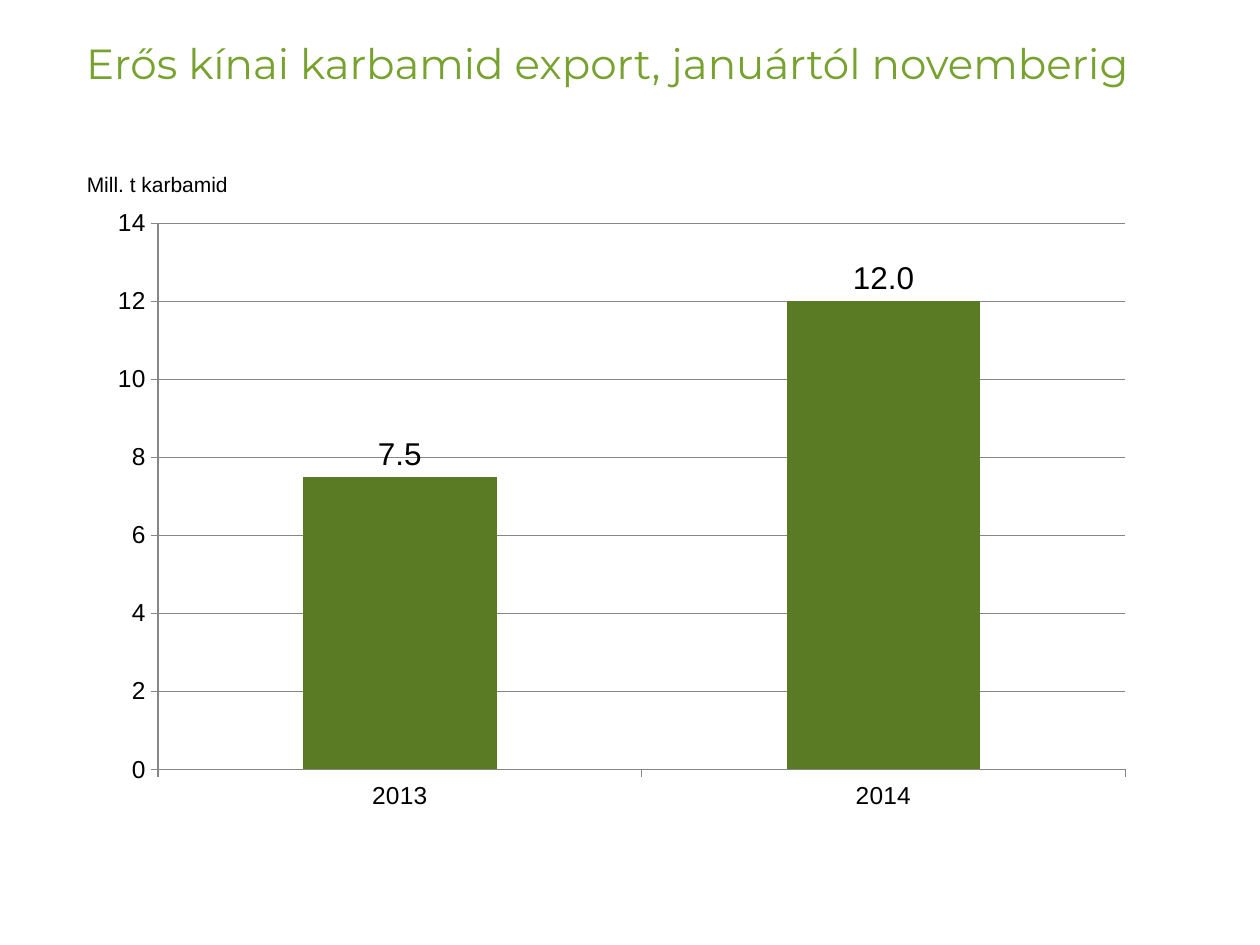
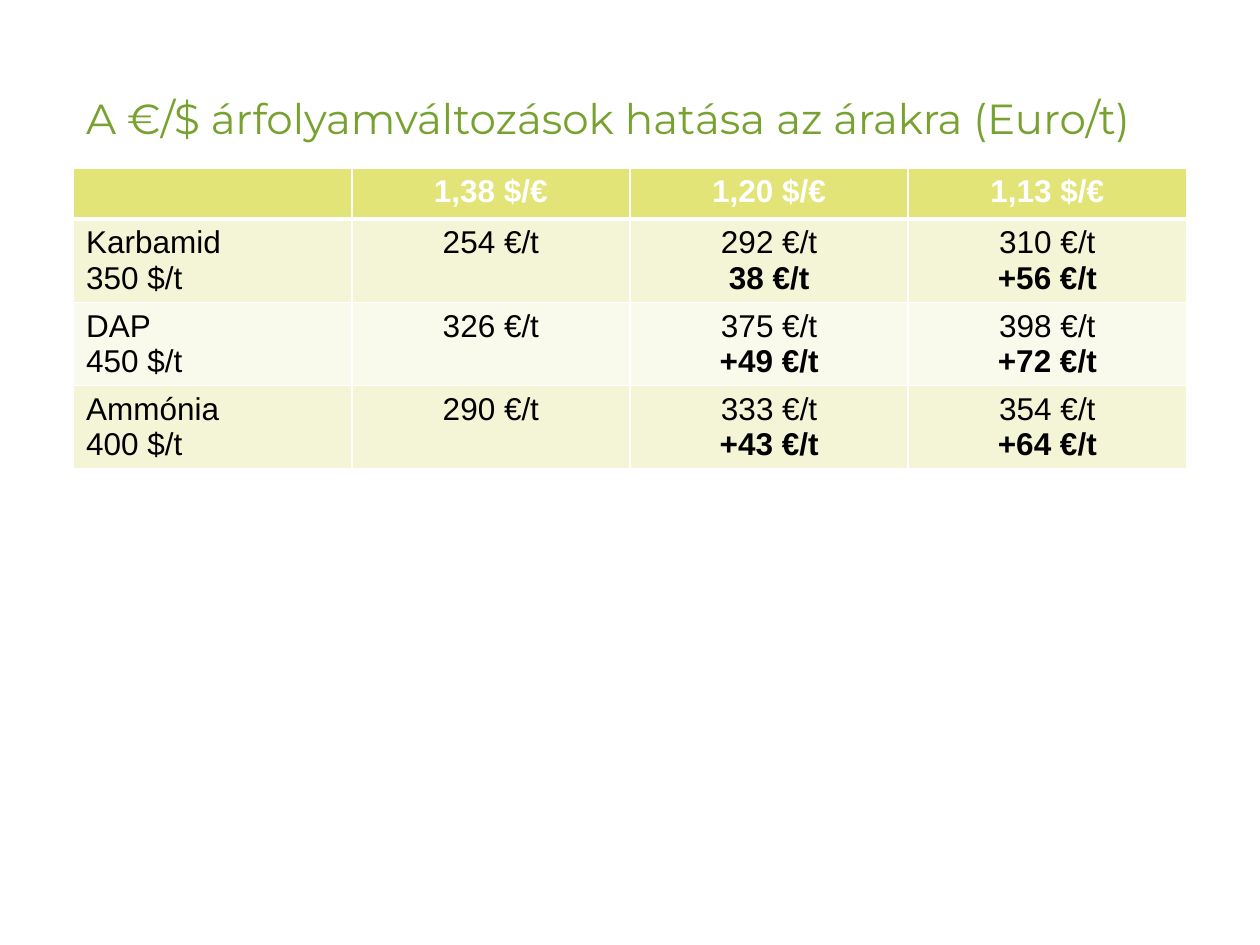
import pptx
import pptx.chart.data
import pptx.dml.color
import pptx.enum.chart
import pptx.enum.text
import pptx.oxml
import pptx.oxml.ns
import pptx.util
from lxml import etree

Pt = pptx.util.Pt
Align = pptx.enum.text.PP_ALIGN
Anchor = pptx.enum.text.MSO_ANCHOR
AutoSize = pptx.enum.text.MSO_AUTO_SIZE
qn = pptx.oxml.ns.qn

COLOURS = {
    "title": "78A22F",
    "text": "000000",
    "white": "FFFFFF",
    "bar": "5A7A23",
    "axis": "868686",
    "header": "E2E477",
    "band_dark": "F4F5D6",
    "band_light": "FAFAEC",
}
LEFT, WIDTH = 42, 636
BODY_TOP = 96


def rgb(name):
    return pptx.dml.color.RGBColor.from_string(COLOURS[name])


class Deck:
    body_font = "Arial"
    title_font = "Montserrat"

    def __init__(self):
        self.presentation = pptx.Presentation()
        self.presentation.slide_width = Pt(720)
        self.presentation.slide_height = Pt(540)
        self.slide = None

    def style(self, font, size, colour="text", bold=False, name=body_font):
        font.name = name
        font.size = Pt(size)
        font.bold = bold
        font.color.rgb = rgb(colour)

    def add_slide(self, heading, anchor):
        self.slide = self.presentation.slides.add_slide(self.presentation.slide_layouts[5])
        title = self.slide.shapes.title
        title.left, title.top, title.width, title.height = Pt(LEFT), Pt(18), Pt(WIDTH), Pt(67)
        frame = title.text_frame
        frame.text = heading
        frame.auto_size = AutoSize.NONE
        frame.vertical_anchor = anchor
        frame.paragraphs[0].alignment = Align.LEFT
        self.style(frame.paragraphs[0].font, 24, "title", name=self.title_font)

    def add_label(self, text, left, top, width, height):
        frame = self.slide.shapes.add_textbox(Pt(left), Pt(top), Pt(width), Pt(height)).text_frame
        frame.word_wrap = False
        frame.auto_size = AutoSize.SHAPE_TO_FIT_TEXT
        frame.text = text
        self.style(frame.paragraphs[0].font, 12)

    def add_columns(self, categories, values, height, top_value, step, plot_area):
        data = pptx.chart.data.CategoryChartData(number_format="#,##0.0")
        data.categories = categories
        data.add_series("Series 1", values)
        chart = self.slide.shapes.add_chart(
            pptx.enum.chart.XL_CHART_TYPE.COLUMN_CLUSTERED,
            Pt(LEFT), Pt(BODY_TOP), Pt(WIDTH), Pt(height), data).chart
        chart.has_title = False
        chart.has_legend = False
        self.style(chart.font, 18)

        for axis in (chart.category_axis, chart.value_axis):
            axis.major_tick_mark = pptx.enum.chart.XL_TICK_MARK.OUTSIDE
            axis.format.line.color.rgb = rgb("axis")
            axis.format.line.width = Pt(0.75)
            self.style(axis.tick_labels.font, 14)
        scale = chart.value_axis
        scale.minimum_scale, scale.maximum_scale, scale.major_unit = 0, top_value, step
        scale.tick_labels.number_format = "0"
        scale.tick_labels.number_format_is_linked = False
        scale.has_major_gridlines = True
        scale.major_gridlines.format.line.color.rgb = rgb("axis")
        scale.major_gridlines.format.line.width = Pt(0.75)

        plot = chart.plots[0]
        plot.gap_width = 150
        plot.vary_by_categories = False
        bars = plot.series[0].format.fill
        bars.solid()
        bars.fore_color.rgb = rgb("bar")
        plot.has_data_labels = True
        labels = plot.data_labels
        labels.show_value = True
        labels.number_format = "#,##0.0"
        labels.number_format_is_linked = False
        labels.position = pptx.enum.chart.XL_LABEL_POSITION.OUTSIDE_END
        self.style(labels.font, 18)
        self.place_plot(chart, plot_area)

    def place_plot(self, chart, plot_area):
        area = chart.element.find(".//" + qn("c:plotArea"))
        for old in area.findall(qn("c:layout")):
            area.remove(old)
        layout = etree.Element(qn("c:layout"))
        manual = etree.SubElement(layout, qn("c:manualLayout"))
        settings = [("layoutTarget", "inner"), ("xMode", "edge"), ("yMode", "edge")]
        for tag, value in settings + list(zip("xywh", plot_area)):
            etree.SubElement(manual, qn("c:" + tag)).set("val", str(value))
        area.insert(0, layout)

    def add_cell_borders(self, cell, bottom):
        properties = cell._tc.get_or_add_tcPr()
        for side, width in (("L", 1), ("R", 1), ("T", 1), ("B", bottom)):
            line = etree.SubElement(properties, qn("a:ln" + side), w=str(Pt(width)))
            fill = etree.SubElement(line, qn("a:solidFill"))
            etree.SubElement(fill, qn("a:srgbClr"), val=COLOURS["white"])

    def add_table(self, rows, header_height, row_height):
        heights = [header_height] + [row_height] * (len(rows) - 1)
        table = self.slide.shapes.add_table(
            len(rows), len(rows[0]), Pt(LEFT), Pt(BODY_TOP), Pt(WIDTH), Pt(sum(heights))).table
        for column in table.columns:
            column.width = Pt(WIDTH / len(rows[0]))
        for r, row in enumerate(rows):
            table.rows[r].height = Pt(heights[r])
            is_header = r == 0
            band = "header" if is_header else ("band_light", "band_dark")[r % 2]
            for c, text in enumerate(row):
                cell = table.cell(r, c)
                self.add_cell_borders(cell, 3 if is_header else 1)
                cell.fill.solid()
                cell.fill.fore_color.rgb = rgb(band)
                cell.text = text
                for n, paragraph in enumerate(cell.text_frame.paragraphs):
                    paragraph.alignment = Align.CENTER if c else Align.LEFT
                    is_change = c > 0 and n > 0
                    self.style(paragraph.font, 18, "white" if is_header else "text",
                               bold=is_header or is_change)


def main():
    deck = Deck()

    deck.add_slide("Erős kínai karbamid export, januártól novemberig", Anchor.TOP)
    deck.add_columns(["2013", "2014"], [7.5, 12], height=376.5, top_value=14, step=2,
                     plot_area=(0.076, 0.084, 0.869, 0.829))
    deck.add_label("Mill. t karbamid", 42.5, 94.5, 96, 21.6)

    deck.add_slide("A €/$ árfolyamváltozások hatása az árakra (Euro/t)", Anchor.BOTTOM)
    deck.add_table([
        ["", "1,38 $/€", "1,20 $/€", "1,13 $/€"],
        ["Karbamid\n350 $/t", "254 €/t", "292 €/t\n38 €/t", "310 €/t\n+56 €/t"],
        ["DAP\n450 $/t", "326 €/t", "375 €/t\n+49 €/t", "398 €/t\n+72 €/t"],
        ["Ammónia\n400 $/t", "290 €/t", "333 €/t\n+43 €/t", "354 €/t\n+64 €/t"],
    ], header_height=29.2, row_height=47.4)

    deck.presentation.save("out.pptx")


if __name__ == "__main__":
    main()
